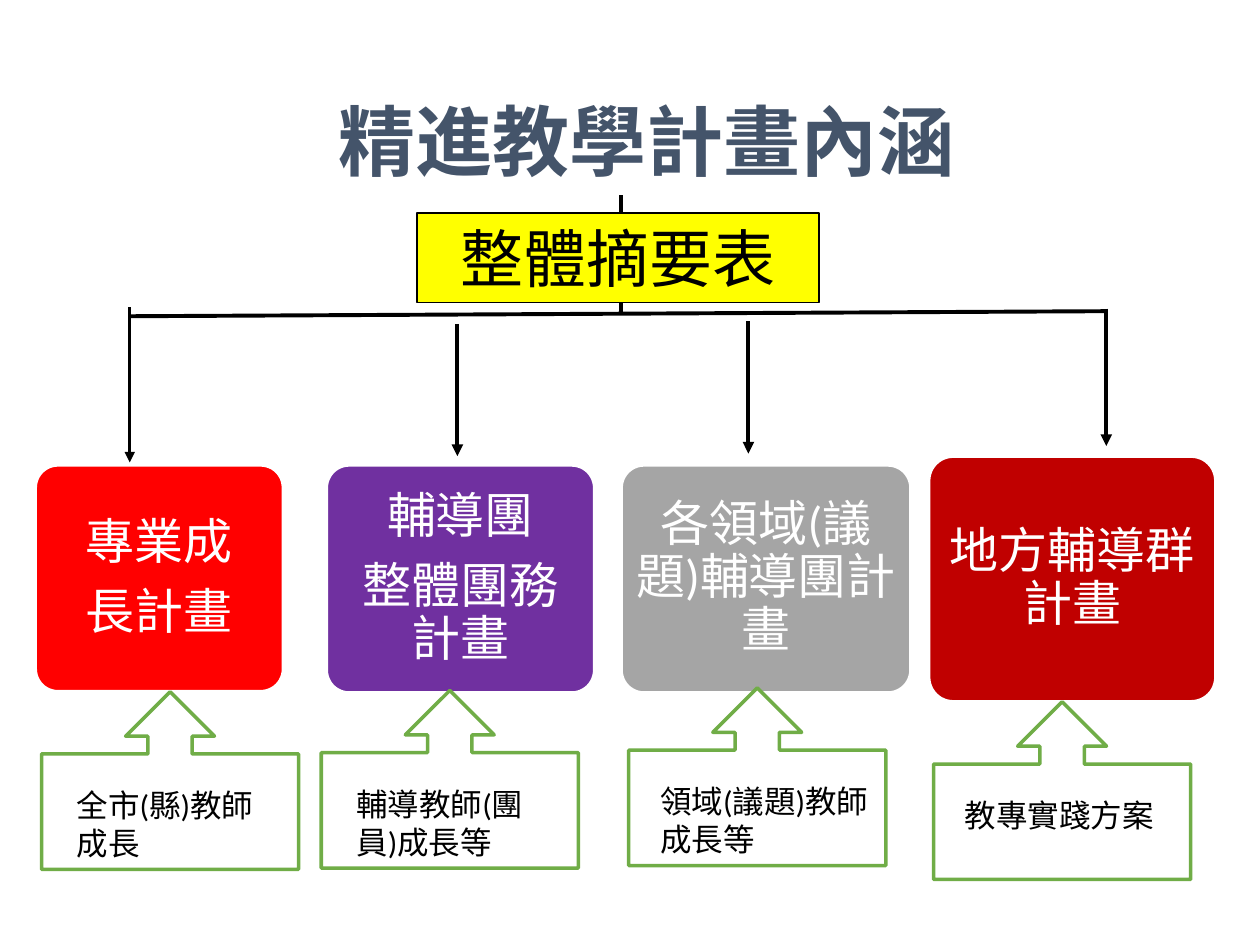
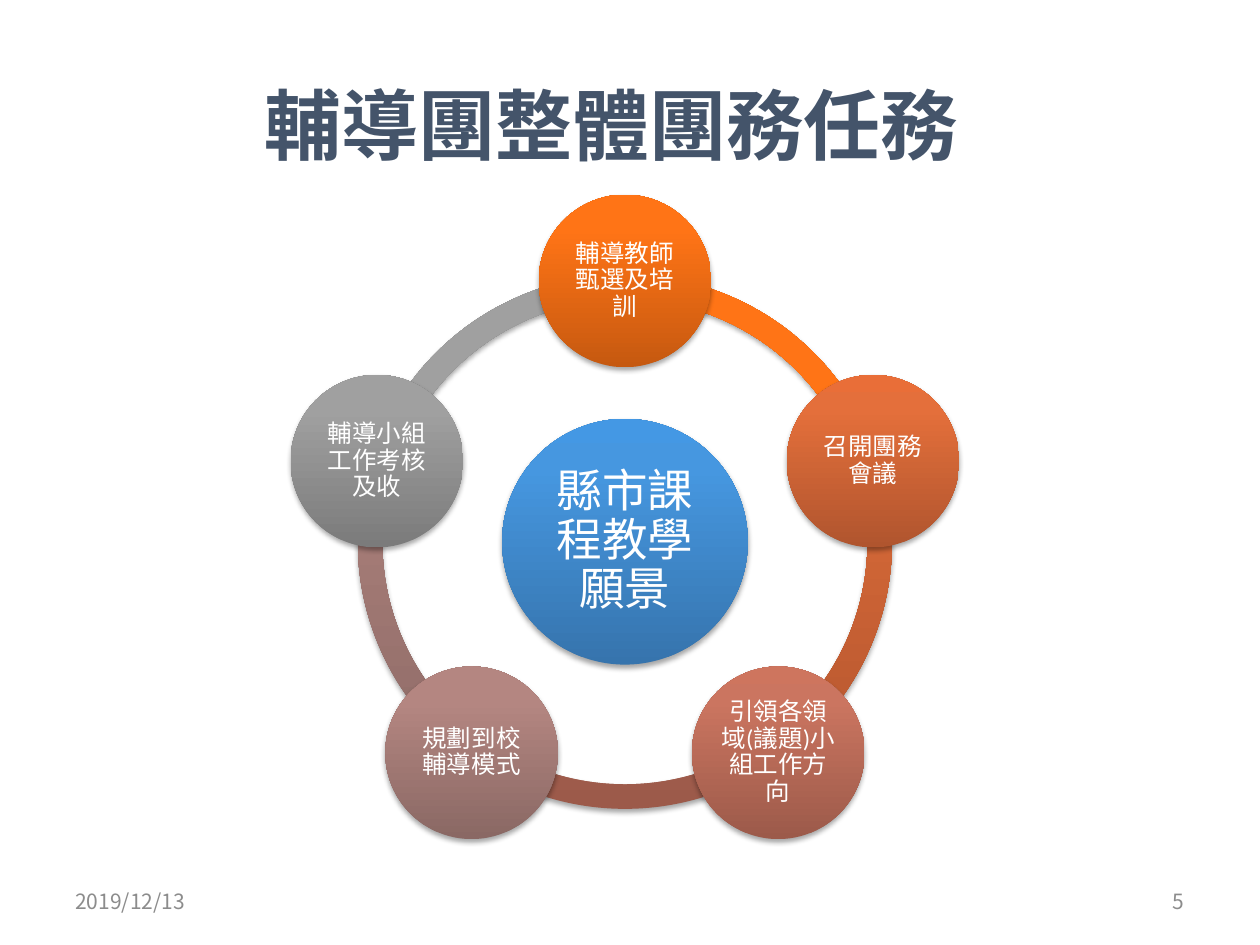
import math

from lxml import etree
from pptx import Presentation
from pptx import util as u
from pptx.dml.color import RGBColor
from pptx.enum import shapes, text
from pptx.oxml import ns

Inches, Pt = u.Inches, u.Pt
SHAPE = shapes.MSO_SHAPE
CENTER, LEFT, RIGHT = text.PP_ALIGN.CENTER, text.PP_ALIGN.LEFT, text.PP_ALIGN.RIGHT
TOP, MIDDLE = text.MSO_ANCHOR.TOP, text.MSO_ANCHOR.MIDDLE

HEADING_FONT, BODY_FONT, BOX_FONT = "Noto Sans CJK SC", "Calibri", "Arial"
SLATE = RGBColor(0x44, 0x54, 0x6A)
WHITE = RGBColor(0xFF, 0xFF, 0xFF)
BLACK = RGBColor(0, 0, 0)
FOOTER_GREY = RGBColor(0x8C, 0x8C, 0x8C)
YELLOW = RGBColor(0xFF, 0xFF, 0)
RED = RGBColor(0xFF, 0, 0)
PURPLE = RGBColor(0x70, 0x30, 0xA0)
GREY = RGBColor(0xA5, 0xA5, 0xA5)
DARK_RED = RGBColor(0xC0, 0, 0)
GREEN = RGBColor(0x70, 0xAD, 0x47)

# Gradients run from the bottom colour to the top one
STOPS = (0, 80, 100)
BLUE_SHADES = ("3674AD", "4697E0", "4498E4")
ORANGE_SHADES = ("C65910", "FF7416", "FF7517")
RUST_SHADES = ("B0552E", "E46F3B", "E96E38")
BRICK_SHADES = ("9C5A4A", "CB7560", "CE755E")
MAUVE_SHADES = ("8A6864", "B48681", "B68681")
GREY_SHADES = ("7B7B7B", "A0A0A0", "A1A1A1")


def write_text(shape, content, size=18, font=BODY_FONT, color=BLACK, bold=False,
               align=LEFT, anchor=TOP, margins=(0.1, 0.05), spacing=None, after=0):
    """Fill a shape with text, one paragraph per line of content."""
    frame = shape.text_frame
    frame.word_wrap = True
    frame.auto_size = text.MSO_AUTO_SIZE.NONE
    frame.vertical_anchor = anchor
    frame.margin_left = frame.margin_right = Inches(margins[0])
    frame.margin_top = frame.margin_bottom = Inches(margins[1])
    frame.text = content
    for paragraph in frame.paragraphs:
        paragraph.alignment = align
        paragraph.line_spacing = spacing
        paragraph.space_before = Pt(0)
        paragraph.space_after = Pt(after)
        for run in paragraph.runs:
            run.font.size = Pt(size)
            run.font.name = font
            run.font.bold = bold
            run.font.color.rgb = color
            east_asian = etree.SubElement(run._r.get_or_add_rPr(), ns.qn("a:ea"))
            east_asian.set("typeface", font)


def add_title_slide(presentation, title, box):
    slide = presentation.slides.add_slide(presentation.slide_layouts[5])
    placeholder = slide.shapes.title
    placeholder.left, placeholder.top, placeholder.width, placeholder.height = map(Inches, box)
    write_text(placeholder, title, size=44, font=HEADING_FONT, color=SLATE, bold=True,
               align=CENTER, anchor=MIDDLE)
    return slide


def add_text_box(slide, box, content, **style):
    write_text(slide.shapes.add_textbox(*map(Inches, box)), content, **style)


def add_block(slide, kind, box, fill=None, line=None, width=0.75):
    shape = slide.shapes.add_shape(kind, *map(Inches, box))
    shape.shadow.inherit = False
    if fill is not None:
        shape.fill.solid()
        shape.fill.fore_color.rgb = fill
    if line is None:
        shape.line.fill.background()
    else:
        shape.line.color.rgb = line
        shape.line.width = Pt(width)
    return shape


def add_line(slide, start, end, width=2.25, arrow=False):
    connector = slide.shapes.add_connector(
        shapes.MSO_CONNECTOR.STRAIGHT, *map(Inches, start + end))
    connector.line.color.rgb = BLACK
    connector.line.width = Pt(width)
    if arrow:
        etree.SubElement(connector.line._get_or_add_ln(), ns.qn("a:tailEnd"), type="triangle")
    etree.SubElement(connector._element.spPr, ns.qn("a:effectLst"))


def add_glossy(slide, kind, box, shades):
    """Add a shape with an upward gradient and a soft shadow below it."""
    shape = add_block(slide, kind, box)
    shape.fill.gradient()
    gradient = shape._element.spPr.find(ns.qn("a:gradFill"))
    for child in list(gradient):
        gradient.remove(child)
    stop_list = etree.SubElement(gradient, ns.qn("a:gsLst"))
    for position, shade in zip(STOPS, shades):
        stop = etree.SubElement(stop_list, ns.qn("a:gs"), pos=str(position * 1000))
        etree.SubElement(stop, ns.qn("a:srgbClr"), val=shade)
    etree.SubElement(gradient, ns.qn("a:lin"), ang=str(270 * 60000), scaled="0")
    effects = shape._element.spPr.find(ns.qn("a:effectLst"))
    shadow = etree.SubElement(effects, ns.qn("a:outerShdw"), blurRad=str(Pt(3.1)),
                              dist=str(Pt(1.8)), dir=str(90 * 60000), rotWithShape="0")
    color = etree.SubElement(shadow, ns.qn("a:srgbClr"), val="000000")
    etree.SubElement(color, ns.qn("a:alpha"), val="35000")
    return shape


def add_footer(slide, date, number):
    for left, content, align in ((0.5, date, LEFT), (7.17, number, RIGHT)):
        add_text_box(slide, (left, 6.95, 2.33, 0.4), content, size=12, font=HEADING_FONT,
                     color=FOOTER_GREY, align=align, anchor=MIDDLE)


def add_plan_box(slide, box, content, fill, font):
    shape = add_block(slide, SHAPE.ROUNDED_RECTANGLE, box, fill, WHITE, 2)
    shape.adjustments[0] = 0.1
    write_text(shape, content, size=28, font=font, color=WHITE, align=CENTER,
               anchor=MIDDLE, margins=(0.06, 0.04), spacing=0.9, after=9.8)


def add_callout(slide, left, top, content, indent, text_width):
    add_block(slide, SHAPE.UP_ARROW_CALLOUT, (left, top, 2.04, 1.41), WHITE, GREEN, 2)
    add_text_box(slide, (left + indent, top + 0.7, text_width, 0.71), content)


def add_tree_lines(slide):
    add_line(slide, (4.93, 1.55), (4.93, 2.49))
    add_line(slide, (1.03, 2.51), (8.78, 2.47))
    for x, top, bottom, width in ((8.78, 2.45, 3.54, 2.25), (5.94, 2.55, 3.6, 2.25),
                                  (3.63, 2.57, 3.62, 2.25), (1.03, 2.44, 3.67, 1.5)):
        add_line(slide, (x, top), (x, bottom), width, arrow=True)


def add_task_ring(slide, center_x, center_y, vision, tasks):
    """Draw the vision in the middle and the tasks clockwise around it."""
    def square(x, y, size):
        return x - size / 2, y - size / 2, size, size

    step = 360 / len(tasks)
    angles = [(270 + step * index) % 360 for index in range(len(tasks))]

    # Ring segments, the last one at the back
    for angle, (_, shades) in reversed(list(zip(angles, tasks))):
        arc = add_glossy(slide, SHAPE.BLOCK_ARC, square(center_x, center_y, 4.24), shades)
        arc.adjustments[0] = angle * 0.6
        arc.adjustments[1] = (angle + step) % 360 * 0.6
        arc.adjustments[2] = 0.046

    # Circles
    circles = [(center_x, center_y, 1.95, vision, BLUE_SHADES, 26, 0.04)]
    for angle, (task, shades) in zip(angles, tasks):
        x = center_x + 2.07 * math.cos(math.radians(angle))
        y = center_y + 2.07 * math.sin(math.radians(angle))
        circles.append((x, y, 1.37, task, shades, 14, 0.02))
    for x, y, diameter, content, shades, size, margin in circles:
        circle = add_glossy(slide, SHAPE.OVAL, square(x, y, diameter), shades)
        write_text(circle, content, size=size, color=WHITE, align=CENTER, anchor=MIDDLE,
                   margins=(margin, margin), spacing=0.9, after=size * 0.35)


def build_plan_slide(presentation):
    slide = add_title_slide(presentation, "精進教學計畫內涵", (0.67, 0.68, 8.92, 0.86))
    for plan in (
        ((0.28, 3.69, 1.97, 1.8), "專業成\n長計畫", RED, BOX_FONT),
        ((2.59, 3.69, 2.13, 1.81), "輔導團\n整體團務計畫", PURPLE, BOX_FONT),
        ((4.93, 3.69, 2.3, 1.81), "各領域(議題)輔導團計畫", GREY, BODY_FONT),
        ((7.37, 3.62, 2.28, 1.95), "地方輔導群計畫", DARK_RED, BODY_FONT),
    ):
        add_plan_box(slide, *plan)
    add_tree_lines(slide)
    for callout in (
        (0.33, 5.49, "全市(縣)教師成長", 0.18, 1.73),
        (2.55, 5.48, "輔導教師(團員)成長等", 0.18, 1.73),
        (4.99, 5.46, "領域(議題)教師成長等", 0.15, 1.87),
        (7.41, 5.57, "教專實踐方案", 0.15, 1.87),
    ):
        add_callout(slide, *callout)
    summary = add_block(slide, SHAPE.RECTANGLE, (3.31, 1.69, 3.19, 0.71), YELLOW, BLACK)
    write_text(summary, "整體摘要表", size=36, align=CENTER)


def build_task_slide(presentation):
    slide = add_title_slide(presentation, "輔導團整體團務任務", (0.35, 0.36, 9, 1.25))
    add_task_ring(slide, 4.96, 4.3, "縣市課程教學願景", (
        ("輔導教師甄選及培訓", ORANGE_SHADES),
        ("召開團務會議", RUST_SHADES),
        ("引領各領域(議題)小組工作方向", BRICK_SHADES),
        ("規劃到校輔導模式", MAUVE_SHADES),
        ("輔導小組工作考核及收", GREY_SHADES),
    ))
    add_footer(slide, "2019/12/13", "5")


def main():
    presentation = Presentation()
    presentation.slide_width, presentation.slide_height = Inches(10), Inches(7.5)
    build_plan_slide(presentation)
    build_task_slide(presentation)
    presentation.save("out.pptx")


if __name__ == "__main__":
    main()
